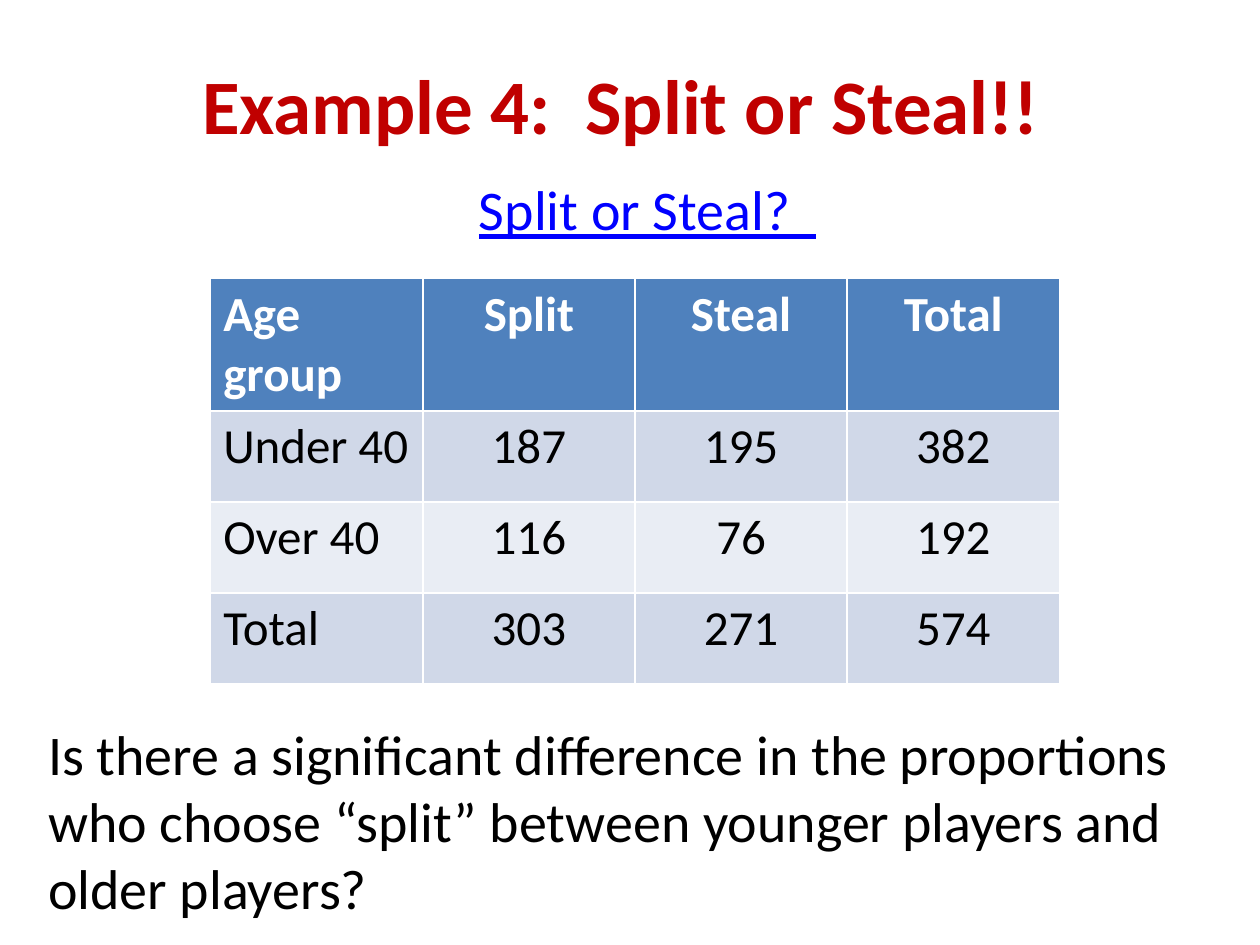
from dataclasses import dataclass

from pptx import Presentation
from pptx.dml.color import RGBColor
from pptx.enum.text import MSO_ANCHOR, PP_ALIGN
from pptx.slide import Slide
from pptx.text.text import TextFrame
from pptx.util import Pt

LEFT, CENTER = PP_ALIGN.LEFT, PP_ALIGN.CENTER
MIDDLE = MSO_ANCHOR.MIDDLE
FONT = "Calibri"
COLORS = {
    "title": "C00000",
    "link": "0000FF",
    "text": "000000",
    "white": "FFFFFF",
    "head": "4F81BD",
    "odd": "D0D8E8",
    "even": "E9EDF4",
}
ROWS = [
    ("Age group", "Split", "Steal", "Total"),
    ("Under 40", "187", "195", "382"),
    ("Over 40", "116", "76", "192"),
    ("Total", "303", "271", "574"),
]
HEAD_H, ROW_H = 73, 52


@dataclass
class Box:
    x: float
    y: float
    w: float
    h: float

    def lengths(self) -> tuple[Pt, Pt, Pt, Pt]:
        return Pt(self.x), Pt(self.y), Pt(self.w), Pt(self.h)


@dataclass
class Note:
    box: Box
    text: str
    color: str
    align: PP_ALIGN
    line: bool = False


TITLE = Box(36, 14.4, 648, 90)
GRID = Box(120.4, 159.2, 485, HEAD_H + 3 * ROW_H)
NOTES = [
    Note(Box(62, 96.4, 616, 46), "Split or Steal?  ", "link", CENTER, True),
    Note(
        Box(20.4, 407.5, 672, 124),
        "Is there a significant difference in the proportions who choose "
        "“split” between younger players and older players?",
        "text",
        LEFT,
    ),
]


def tint(name: str) -> RGBColor:
    return RGBColor.from_string(COLORS[name])


def write(frame: TextFrame, text: str, *, size: float, color: str,
          align: PP_ALIGN = LEFT, bold: bool = False,
          line: bool = False) -> None:
    frame.word_wrap = True
    para = frame.paragraphs[0]
    para.alignment = align
    run = para.add_run()
    run.text = text
    font = run.font
    font.name = FONT
    font.size = Pt(size)
    font.bold = bold
    font.underline = line
    font.color.rgb = tint(color)


def add_title(slide: Slide, text: str) -> None:
    title = slide.shapes.title
    title.left, title.top, title.width, title.height = TITLE.lengths()
    title.text_frame.vertical_anchor = MIDDLE
    write(title.text_frame, text, size=44, color="title", align=CENTER,
          bold=True)


def add_note(slide: Slide, note: Note) -> None:
    shape = slide.shapes.add_textbox(*note.box.lengths())
    write(shape.text_frame, note.text, size=32, color=note.color,
          align=note.align, line=note.line)


def add_grid(slide: Slide) -> None:
    table = slide.shapes.add_table(
        len(ROWS), len(ROWS[0]), *GRID.lengths()).table
    for col in table.columns:
        col.width = Pt(GRID.w / len(ROWS[0]))
    for r, row in enumerate(ROWS):
        head = r == 0
        table.rows[r].height = Pt(HEAD_H if head else ROW_H)
        fill = "head" if head else "odd" if r % 2 else "even"
        for c, text in enumerate(row):
            cell = table.cell(r, c)
            cell.fill.solid()
            cell.fill.fore_color.rgb = tint(fill)
            write(cell.text_frame, text, size=28, bold=head,
                  color="white" if head else "text",
                  align=CENTER if c else LEFT)


def main() -> None:
    deck = Presentation()
    deck.slide_width, deck.slide_height = Pt(720), Pt(540)
    slide = deck.slides.add_slide(deck.slide_layouts[5])
    add_title(slide, "Example 4:  Split or Steal!! ")
    add_grid(slide)
    for note in NOTES:
        add_note(slide, note)
    deck.save("out.pptx")


if __name__ == "__main__":
    main()
